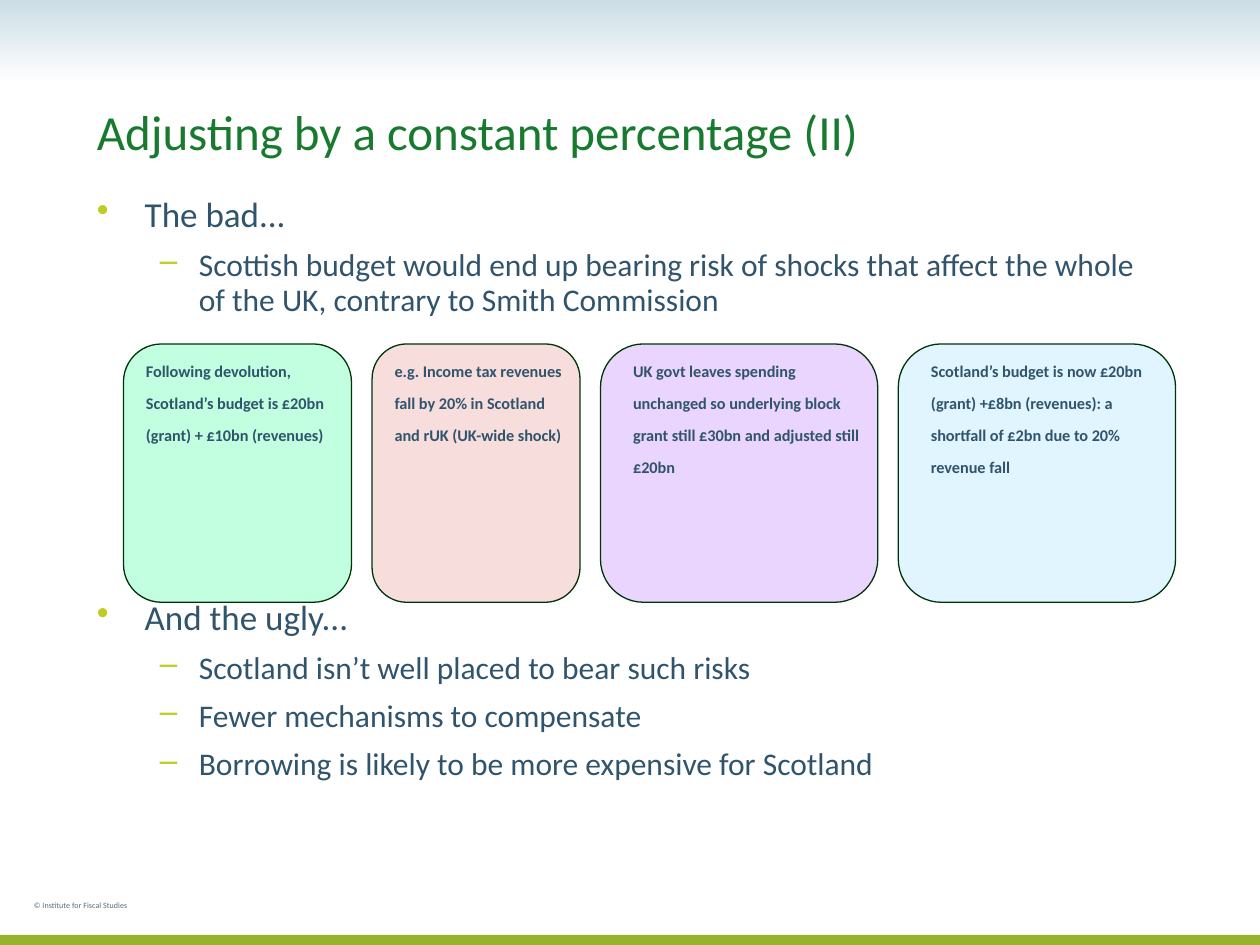
from dataclasses import dataclass
from lxml.etree import SubElement
from pptx import Presentation
from pptx.dml.color import RGBColor
from pptx.enum.shapes import MSO_SHAPE
from pptx.enum.text import MSO_ANCHOR
from pptx.oxml.ns import qn
from pptx.util import Inches, Pt


@dataclass(frozen=True)
class Theme:
    face: str = "Calibri"
    sky: str = "CCDDE6"
    white: str = "FFFFFF"
    lime: str = "97B32C"
    mark: str = "BFCC22"
    green: str = "187A2E"
    ink: str = "31546D"
    gray: str = "526D7F"
    edge: str = "003306"
    head: int = 28
    main: int = 20
    sub: int = 18
    card: int = 16
    note: int = 8


THEME = Theme()
COLS, ROWS = 100, 75
DECK = Presentation()
DECK.slide_width, DECK.slide_height = Inches(10), Inches(7.5)
COL, ROW = DECK.slide_width / COLS, DECK.slide_height / ROWS

POINTS = [
    ("The bad...", 0, 0),
    ("Scottish budget would end up bearing risk of shocks that affect the whole "
     "of the UK, contrary to Smith Commission", 1, 3.5),
    ("And the ugly...", 0, 156),
    ("Scotland isn’t well placed to bear such risks", 1, 3.5),
    ("Fewer mechanisms to compensate", 1, 3.5),
    ("Borrowing is likely to be more expensive for Scotland", 1, 3.5),
]
CARDS = [
    (18.1, 0.8, "C2FFE0",
     "Following devolution, Scotland’s budget is £20bn (grant) + £10bn (revenues)"),
    (16.5, 0.8, "F8DDDD",
     "e.g. Income tax revenues fall by 20% in Scotland and rUK (UK-wide shock)"),
    (22, 1.6, "EAD5FF",
     "UK govt leaves spending unchanged so underlying block grant still £30bn "
     "and adjusted still £20bn"),
    (22, 1.6, "E0F5FF",
     "Scotland’s budget is now £20bn (grant) +£8bn (revenues): a shortfall of "
     "£2bn due to 20% revenue fall"),
]


def put(item, form):
    for key, val in form.items():
        setattr(item, key, val)


def place(box):
    x, y, w, h = box
    return [int(n) for n in (x * COL, y * ROW, w * COL, h * ROW)]


def block(slide, kind, box):
    shape = slide.shapes.add_shape(kind, *place(box))
    shape.shadow.inherit = False
    shape.line.fill.background()
    return shape


def paint(fill, tone):
    fill.solid()
    fill.fore_color.rgb = RGBColor.from_string(tone)


def frame(slide, box, anchor=MSO_ANCHOR.TOP):
    text = slide.shapes.add_textbox(*place(box)).text_frame
    put(text, {"word_wrap": True, "vertical_anchor": anchor})
    return text


def write(para, words, size, tone, bold=False, lift=False):
    run = para.add_run()
    run.text = words
    put(run.font, {"name": THEME.face, "size": Pt(size), "bold": bold})
    run.font.color.rgb = RGBColor.from_string(tone)
    if lift:
        run.font._element.set("baseline", "30000")


def bullet(para, level):
    sign, left, hang = (("•", 0.38, 0.38), ("–", 0.81, 0.31))[level]
    props = para._p.get_or_add_pPr()
    props.set("marL", str(Inches(left)))
    props.set("indent", str(-Inches(hang)))
    tint = SubElement(props, qn("a:buClr"))
    SubElement(tint, qn("a:srgbClr")).set("val", THEME.mark)
    SubElement(props, qn("a:buChar")).set("char", sign)


def banner(slide, box):
    fill = block(slide, MSO_SHAPE.RECTANGLE, box).fill
    fill.gradient()
    fill.gradient_angle = 270
    for stop, tone, spot in zip(fill.gradient_stops, (THEME.sky, THEME.white), (0, 1)):
        stop.color.rgb = RGBColor.from_string(tone)
        stop.position = spot


def footer(slide, box):
    x, y, w, h = box
    paint(block(slide, MSO_SHAPE.RECTANGLE, (x, y + h - 0.8, w, 0.8)).fill, THEME.lime)
    text = frame(slide, (x + 1.7, y, 27.5, 2.5))
    write(text.paragraphs[0], "© Institute for Fiscal Studies",
          THEME.note, THEME.gray, lift=True)


def title(slide, box):
    para = frame(slide, box, MSO_ANCHOR.BOTTOM).paragraphs[0]
    para.line_spacing = 0.9
    write(para, "Adjusting by a constant percentage (II)", THEME.head, THEME.green)


def body(slide, box):
    text = frame(slide, box)
    for i, (words, level, gap) in enumerate(POINTS):
        para = text.add_paragraph() if i else text.paragraphs[0]
        put(para, {"level": level, "line_spacing": 0.95,
                   "space_before": Pt(gap), "space_after": Pt(3.5)})
        bullet(para, level)
        write(para, words, (THEME.main, THEME.sub)[level], THEME.ink)


def cards(slide, box):
    x, y, w, h = box
    gap = (w - sum(card[0] for card in CARDS)) / (len(CARDS) - 1)
    for wide, pad, tone, words in CARDS:
        shape = block(slide, MSO_SHAPE.ROUNDED_RECTANGLE, (x, y, wide, h))
        paint(shape.fill, tone)
        paint(shape.line.fill, THEME.edge)
        shape.line.width = Pt(0.75)
        para = frame(slide, (x + pad, y + 0.8, wide - pad, h - 1.6)).paragraphs[0]
        para.line_spacing = 0.95
        write(para, words, THEME.card, THEME.ink, bold=True, lift=True)
        x += wide + gap


def main():
    slide = DECK.slides.add_slide(DECK.slide_layouts[6])
    banner(slide, (0, 0, COLS, 6.7))
    footer(slide, (0, 70.8, COLS, 4.2))
    title(slide, (6.7, 2.5, 85.8, 10.8))
    body(slide, (6.7, 15, 85.8, 51.2))
    cards(slide, (9.8, 27.3, 83.5, 20.5))
    DECK.save("out.pptx")


if __name__ == "__main__":
    main()
